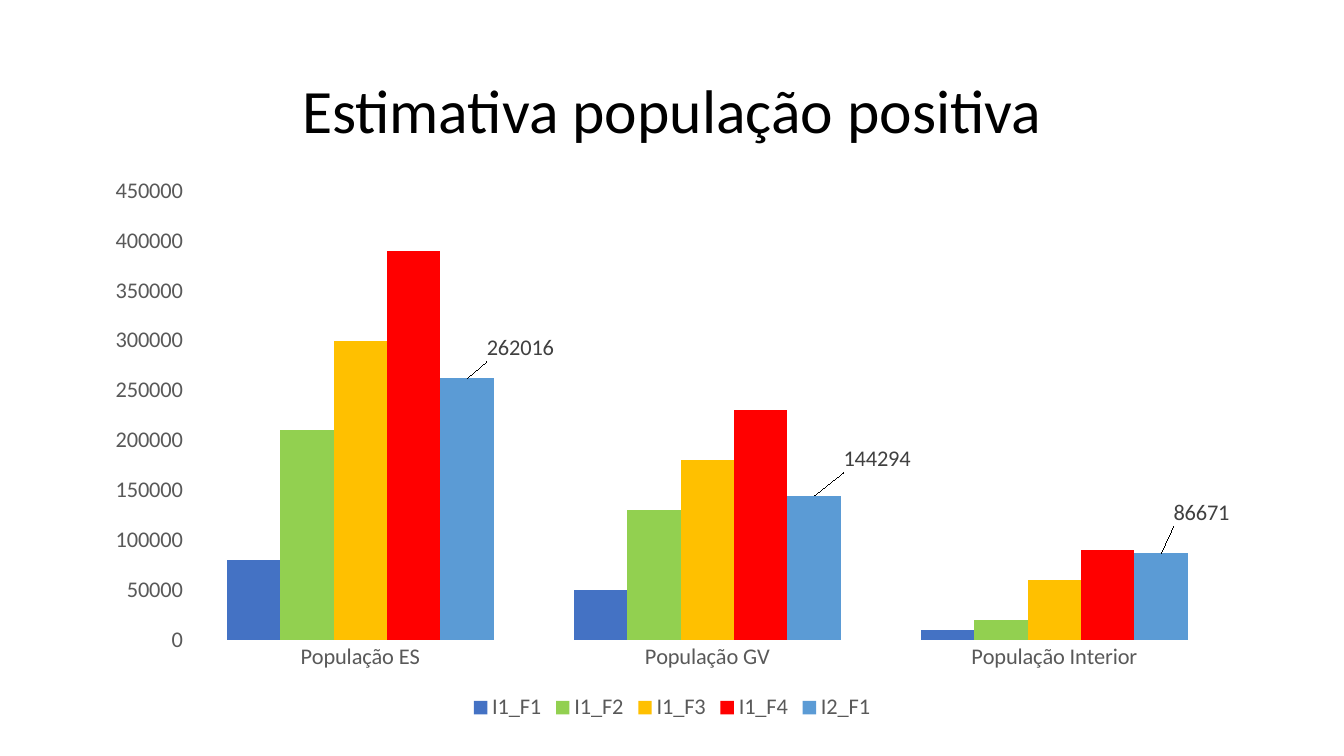
from dataclasses import dataclass

from lxml.etree import SubElement
from pptx import Presentation
from pptx.chart.data import CategoryChartData
from pptx.dml.color import RGBColor
from pptx.enum.chart import XL_CHART_TYPE, XL_LABEL_POSITION, XL_LEGEND_POSITION, XL_TICK_MARK
from pptx.enum.text import MSO_ANCHOR, PP_ALIGN
from pptx.oxml import parse_xml
from pptx.oxml.ns import nsdecls, qn
from pptx.util import Inches, Pt


@dataclass(frozen=True)
class Theme:
    face: str = "Calibri"
    ink: str = "000000"
    axis: str = "595959"
    label: str = "404040"
    bars: tuple = ("4472C4", "92D050", "FFC000", "FF0000", "5B9BD5")
    head: int = 44
    small: int = 16


GROUPS = ("População ES", "População GV", "População Interior")
ROUNDS = {
    "I1_F1": (80000, 50000, 10000),
    "I1_F2": (210000, 130000, 20000),
    "I1_F3": (300000, 180000, 60000),
    "I1_F4": (390000, 230000, 90000),
    "I2_F1": (262016, 144294, 86671),
}
FIELD = (11.23, 2.94, 123.96, 53.45)
SHIFTS = ((6.35, -1.53), (7.5, -2.3), (4.8, -2.73))
LEADS = f"""<c:extLst {nsdecls('c')}>
<c:ext uri="{{CE6537A1-D6FC-4f65-9D91-7224C49458BB}}"
 xmlns:c15="http://schemas.microsoft.com/office/drawing/2012/chart">
<c15:showLeaderLines val="0"/></c:ext></c:extLst>"""


def style(font, size, color, face):
    font.name = face
    font.size = Pt(size)
    font.color.rgb = RGBColor.from_string(color)


def write(frame, text, *, size, color, face, align, lead):
    para = frame.paragraphs[0]
    para.alignment = align
    para.line_spacing = lead
    run = para.add_run()
    run.text = text
    style(run.font, size, color, face)


def layout(**parts):
    node = parse_xml(f"<c:layout {nsdecls('c')}/>")
    manual = SubElement(node, qn("c:manualLayout"))
    for name, value in parts.items():
        SubElement(manual, qn(f"c:{name}")).set("val", str(value))
    return node


class Deck:
    """Draw elements on a slide with a grid of 160 columns by 90 rows."""

    def __init__(self, theme):
        self.theme = theme
        self.show = Presentation()
        self.show.slide_width = Inches(13.33)
        self.show.slide_height = Inches(7.5)
        self.slide = self.show.slides.add_slide(self.show.slide_layouts[6])

    def place(self, col, row, cols, rows):
        wide, high = self.show.slide_width / 160, self.show.slide_height / 90
        return int(col * wide), int(row * high), int(cols * wide), int(rows * high)

    def title(self, text, *area):
        frame = self.slide.shapes.add_textbox(*self.place(*area)).text_frame
        frame.word_wrap = True
        frame.vertical_anchor = MSO_ANCHOR.MIDDLE
        write(frame, text, size=self.theme.head, color=self.theme.ink,
              face=self.theme.face, align=PP_ALIGN.CENTER, lead=0.9)

    def small(self, font, color):
        style(font, self.theme.small, color, self.theme.face)

    def chart(self, groups, rounds, field, shifts, *area):
        data = CategoryChartData(number_format="0")
        data.categories = groups
        for name, values in rounds.items():
            data.add_series(name, values)
        kind = XL_CHART_TYPE.COLUMN_CLUSTERED
        chart = self.slide.shapes.add_chart(kind, *self.place(*area), data).chart
        chart.has_title = False
        self.small(chart.font, self.theme.axis)
        for axis in (chart.category_axis, chart.value_axis):
            axis.has_major_gridlines = False
            axis.major_tick_mark = axis.minor_tick_mark = XL_TICK_MARK.NONE
            axis.format.line.fill.background()
            self.small(axis.tick_labels.font, self.theme.axis)
        chart.value_axis.minimum_scale = 0
        chart.value_axis.maximum_scale = 450000
        chart.value_axis.major_unit = 50000
        chart.has_legend = True
        chart.legend.position = XL_LEGEND_POSITION.BOTTOM
        chart.legend.include_in_layout = False
        self.small(chart.legend.font, self.theme.axis)

        plot = chart.plots[0]
        plot.gap_width = 150
        plot.overlap = 0
        plot.vary_by_categories = False
        for series, color in zip(plot.series, self.theme.bars):
            series.invert_if_negative = False
            series.format.fill.solid()
            series.format.fill.fore_color.rgb = RGBColor.from_string(color)
        cols, rows = area[2:]
        self.labels(series, [(x / cols, y / rows) for x, y in shifts])

        left, top, wide, high = field
        inner = chart.element.find(".//" + qn("c:plotArea"))
        for old in inner.findall(qn("c:layout")):
            inner.remove(old)
        inner.insert(0, layout(layoutTarget="inner", xMode="edge", yMode="edge",
                               x=left / cols, y=top / rows, w=wide / cols, h=high / rows))

    def labels(self, series, shifts):
        series.data_labels.show_value = True
        series.data_labels.number_format = "0"
        series.data_labels.number_format_is_linked = False
        self.small(series.data_labels.font, self.theme.label)
        for index in range(len(shifts)):
            label = series.points[index].data_label
            self.small(label.font, self.theme.label)
            label.position = XL_LABEL_POSITION.OUTSIDE_END
        group = series.data_labels._element
        for node, (x, y) in zip(group.findall(qn("c:dLbl")), shifts):
            node.find(qn("c:idx")).addnext(layout(x=x, y=y))
        for lead in group.findall(qn("c:showLeaderLines")):
            group.remove(lead)
        group.append(parse_xml(LEADS))


def main():
    deck = Deck(Theme())
    deck.title("Estimativa população positiva", 11, 4.8, 138, 17.4)
    deck.chart(GROUPS, ROUNDS, FIELD, SHIFTS, 11, 19.8, 138, 66.6)
    deck.show.save("out.pptx")


if __name__ == "__main__":
    main()
